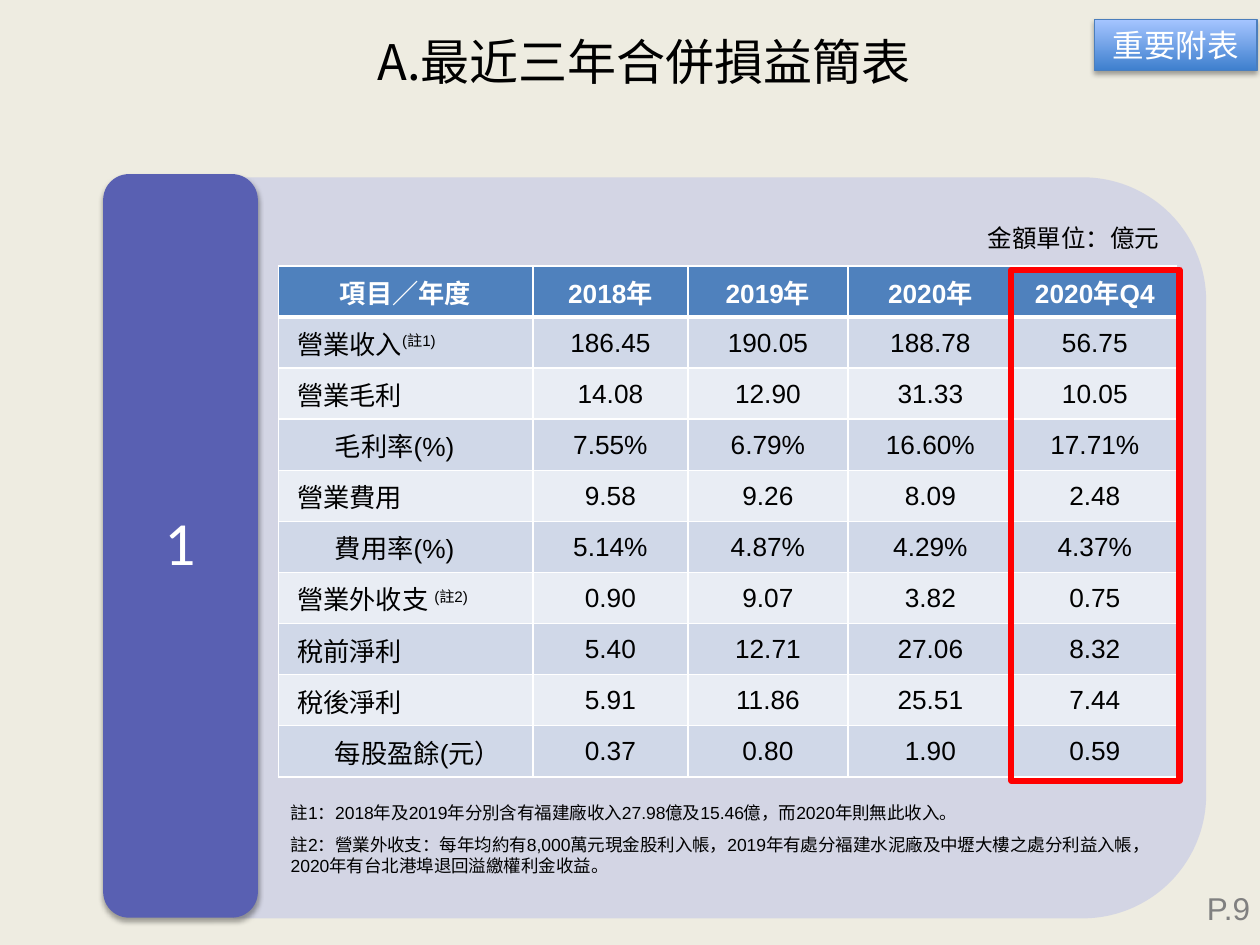
from lxml.etree import SubElement
from pptx import Presentation
from pptx.dml.color import RGBColor
from pptx.enum.shapes import MSO_SHAPE
from pptx.enum.text import MSO_ANCHOR, PP_ALIGN
from pptx.oxml.ns import qn
from pptx.util import Cm, Pt

SANS, CJK = "Arial", "Noto Sans CJK SC"
MID, LEFT = PP_ALIGN.CENTER, PP_ALIGN.LEFT


def rgb(code):
    return RGBColor.from_string(code)


def sub(node, tag, **attrs):
    return SubElement(node, qn(tag), {k: str(v) for k, v in attrs.items()})


class Deck:
    def __init__(self):
        self.prs = Presentation()
        self.prs.slide_width, self.prs.slide_height = Cm(25.4), Cm(19.05)
        self.slide = self.prs.slides.add_slide(self.prs.slide_layouts[6])
        back = self.slide.background.fill
        back.solid()
        back.fore_color.rgb = rgb("EEECE1")

    def style(self, run, size, color="000000", font=SANS, bold=False):
        run.font.size, run.font.name, run.font.bold = Pt(size), font, bold
        run.font.color.rgb = rgb(color)

    def label(self, frame, lines, size, color="000000", font=SANS, align=LEFT, gap=0):
        frame.text = lines[0]
        for line in lines[1:]:
            frame.add_paragraph().text = line
        for para in frame.paragraphs:
            para.alignment = align
            for run in para.runs:
                self.style(run, size, color, font)
        for para in frame.paragraphs[:-1]:
            para.space_after = Pt(gap)

    def text(self, box, lines, size, wrap=True, side=0.25, **look):
        frame = self.slide.shapes.add_textbox(*map(Cm, box)).text_frame
        frame.word_wrap = wrap
        frame.margin_left = frame.margin_right = Cm(side)
        self.label(frame, lines, size, **look)
        return frame

    def shape(self, kind, box, fill=None, line=None, width=1, alpha=None, shade=False):
        item = self.slide.shapes.add_shape(kind, *map(Cm, box))
        if fill:
            item.fill.solid()
            item.fill.fore_color.rgb = rgb(fill)
        else:
            item.fill.background()
        if alpha:
            tint = item._element.spPr.find(qn("a:solidFill"))[0]
            sub(tint, "a:alpha", val=alpha * 1000)
        if line:
            item.line.color.rgb, item.line.width = rgb(line), Pt(width)
        else:
            item.line.fill.background()
        item.shadow.inherit = False
        if shade:
            glow = sub(item._element.spPr.find(qn("a:effectLst")), "a:outerShdw",
                       blurRad=Pt(3.1), dist=Pt(1.8), dir=5400000, rotWithShape=0)
            sub(sub(glow, "a:srgbClr", val="000000"), "a:alpha", val=35000)
        return item

    def edges(self, cell, base):
        prop = cell._tc.get_or_add_tcPr()
        widths = {"a:lnL": 1, "a:lnR": 1, "a:lnT": 1, "a:lnB": base}
        for spot, (tag, width) in enumerate(widths.items()):
            line = sub(prop, tag, w=Pt(width))
            sub(sub(line, "a:solidFill"), "a:srgbClr", val="FFFFFF")
            prop.insert(spot, line)

    def cell(self, cell, words, fill, inset, align, head, note=""):
        cell.fill.solid()
        cell.fill.fore_color.rgb = rgb(fill)
        cell.vertical_anchor = MSO_ANCHOR.MIDDLE
        cell.margin_left, cell.margin_right = Cm(inset), Cm(0.02)
        cell.margin_top, cell.margin_bottom = Cm(0.02), 0
        para = cell.text_frame.paragraphs[0]
        para.text = words
        para.alignment = align
        if note:
            para.add_run().text = note
        for run in para.runs:
            self.style(run, 15, "FFFFFF" if head else "000000", bold=head)
        if note:
            para.runs[1].font._element.set("baseline", "30000")
        self.edges(cell, 3 if head else 1)

    def table(self, box, widths, rows):
        grid = self.slide.shapes.add_table(len(rows), len(widths), *map(Cm, box)).table
        for col, width in zip(grid.columns, widths):
            col.width = Cm(width)
        for r, row in enumerate(rows):
            head = r == 0
            grid.rows[r].height = Cm(box[3] / len(rows))
            fill = "4F81BD" if head else ("E9EDF4", "D0D8E8")[r % 2]
            for c, words in enumerate(row):
                first = c == 0 and not head
                inset, note = 0.02, ""
                if first:
                    inset = 1.14 if words in DEEP else 0.38
                    note = NOTES.get(words, "")
                self.cell(grid.cell(r, c), words, fill, inset,
                          LEFT if first else MID, head, note)


ROWS = [
    ["項目／年度", "2018年", "2019年", "2020年", "2020年Q4"],
    ["營業收入", "186.45", "190.05", "188.78", "56.75"],
    ["營業毛利", "14.08", "12.90", "31.33", "10.05"],
    ["毛利率(%)", "7.55%", "6.79%", "16.60%", "17.71%"],
    ["營業費用", "9.58", "9.26", "8.09", "2.48"],
    ["費用率(%)", "5.14%", "4.87%", "4.29%", "4.37%"],
    ["營業外收支 ", "0.90", "9.07", "3.82", "0.75"],
    ["稅前淨利", "5.40", "12.71", "27.06", "8.32"],
    ["稅後淨利", "5.91", "11.86", "25.51", "7.44"],
    ["每股盈餘(元）", "0.37", "0.80", "1.90", "0.59"],
]
DEEP = {"毛利率(%)", "費用率(%)", "每股盈餘(元）"}
NOTES = {"營業收入": "(註1)", "營業外收支 ": "(註2)"}
FOOT = [
    "註1：2018年及2019年分別含有福建廠收入27.98億及15.46億，而2020年則無此收入。",
    "註2：營業外收支：每年均約有8,000萬元現金股利入帳，2019年有處分褔建水泥廠及中壢大樓之處分利益入帳，"
    "2020年有台北港埠退回溢繳權利金收益。",
]


def main():
    deck = Deck()

    # Title
    deck.text((2.21, 0.51, 21.54, 1.57), ["A.最近三年合併損益簡表"], 28, font=CJK, align=MID)

    # Panel and number tab
    panel = deck.shape(MSO_SHAPE.ROUND_2_SAME_RECTANGLE, (7.04, 1.24, 14.94, 19.61),
                       "D1D3E5", alpha=90)
    panel.rotation = 90
    deck.shape(MSO_SHAPE.ROUNDED_RECTANGLE, (2.08, 3.51, 3.12, 14.99), "5960B2", shade=True)
    tab = deck.text((2.18, 4.24, 2.9, 13.54), ["1"], 35, side=0.38,
                    color="FFFFFF", font="Calibri", align=MID)
    tab.vertical_anchor = MSO_ANCHOR.MIDDLE
    tab.paragraphs[0].line_spacing = 0.9

    # Income table
    deck.table((5.61, 5.36, 18.11, 10.3), [5.13, 3.13, 3.22, 3.33, 3.3], ROWS)

    # Notes and unit
    deck.text((5.61, 16.05, 17.7, 1.75), FOOT, 10, gap=6)
    deck.text((19.66, 4.37, 4.09, 0.86), ["金額單位：億元"], 14, wrap=False)

    # Frame round the last quarter
    deck.shape(MSO_SHAPE.RECTANGLE, (20.39, 5.44, 3.39, 10.3), line="FF0000", width=3.5)

    # Page number
    deck.text((24.13, 17.8, 1.27, 1.02), ["P.9"], 18, wrap=False, side=0,
              color="808080", align=MID)

    # Badge
    badge = deck.shape(MSO_SHAPE.RECTANGLE, (22.07, 0.4, 3.27, 1.02),
                       line="4B7EBC", width=0.75, shade=True)
    badge.fill.gradient()
    badge.fill.gradient_angle = 90
    for spot, code in enumerate(("3F80CE", "A4C4FF")):
        stop = badge.fill.gradient_stops[spot]
        stop.color.rgb, stop.position = rgb(code), spot
    badge.text_frame.word_wrap = False
    deck.label(badge.text_frame, ["重要附表"], 18, "FFFFFF", CJK, MID)

    deck.prs.save("out.pptx")


if __name__ == "__main__":
    main()
